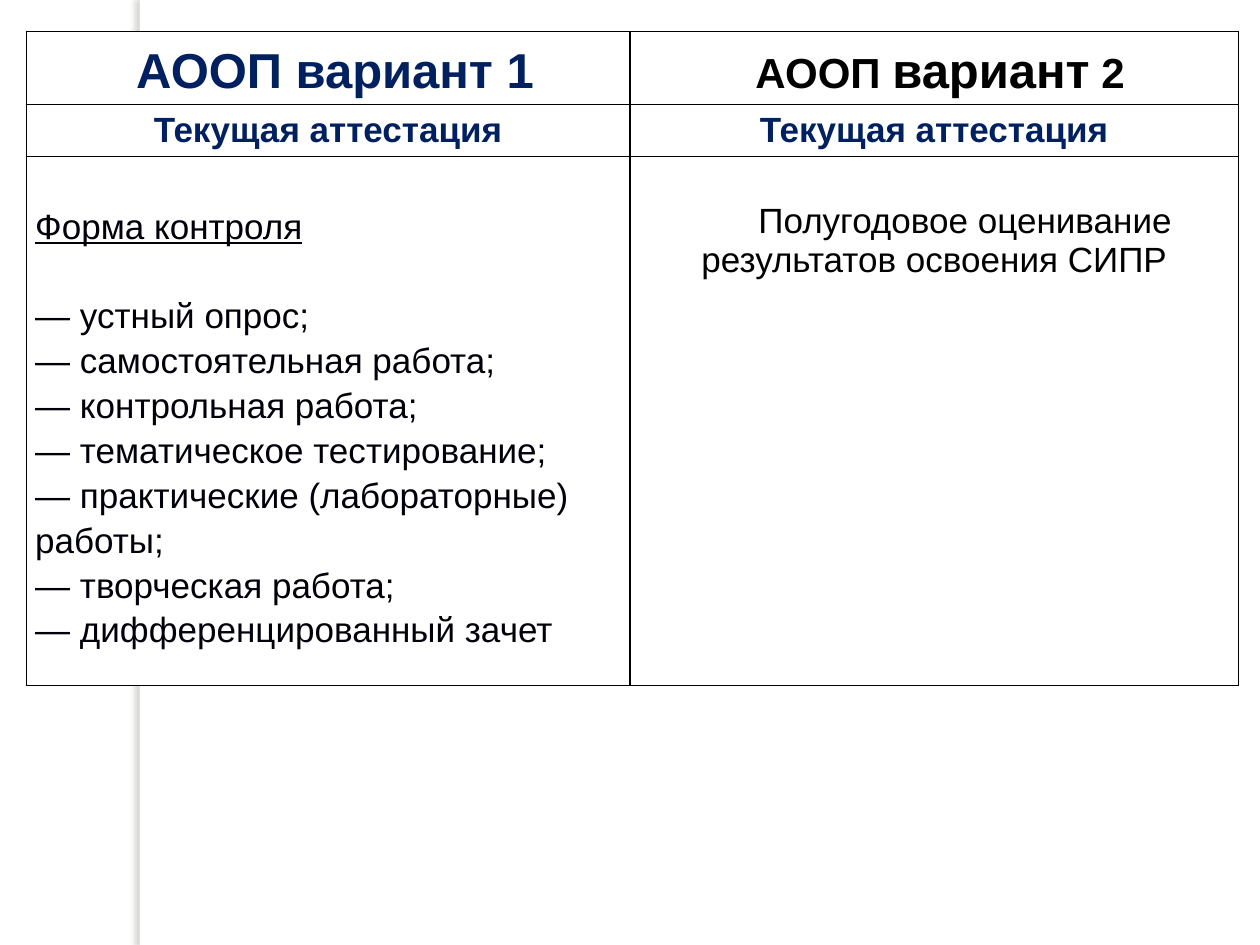
"""Build a slide comparing current assessment in two programme variants."""
from lxml import etree
from pptx import Presentation
from pptx.dml.color import RGBColor
from pptx.enum.shapes import MSO_SHAPE
from pptx.enum.text import PP_ALIGN
from pptx.oxml.ns import qn
from pptx.util import Inches, Pt

RECTANGLE = MSO_SHAPE.RECTANGLE
LEFT, CENTER = PP_ALIGN.LEFT, PP_ALIGN.CENTER
FONT = "Arial"
WHITE, BLACK, NAVY, INK, SHADOW = "FFFFFF", "000000", "002060", "00000A", "736F63"
COLUMN_WIDTHS = (4.79, 4.83)
ROW_HEIGHTS = (0.58, 0.41, 4.2)
CONTROL_FORMS = (
    "— устный опрос;",
    "— самостоятельная работа;",
    "— контрольная работа;",
    "— тематическое тестирование;",
    "— практические (лабораторные) работы;",
    "— творческая работа;",
    "— дифференцированный зачет",
)


def color(value):
    """Return the colour for a hex string."""
    return RGBColor.from_string(value)


def add_side_strip(slide):
    """Add the white vertical strip that casts a soft shadow to the left."""
    strip = slide.shapes.add_shape(RECTANGLE, Inches(1.11), 0, Inches(0.08), Inches(7.5))
    strip.shadow.inherit = False
    strip.fill.solid()
    strip.fill.fore_color.rgb = color(WHITE)
    strip.line.fill.background()
    effects = strip.element.spPr.find(qn("a:effectLst"))
    shadow = etree.SubElement(
        effects, qn("a:outerShdw"), blurRad=str(Pt(3)), dist=str(Pt(3)),
        dir="10800000", algn="tl", rotWithShape="0")
    shade = etree.SubElement(shadow, qn("a:srgbClr"), val=SHADOW)
    etree.SubElement(shade, qn("a:alpha"), val="25000")


def format_cell(cell):
    """Give a cell black borders and a white fill."""
    properties = cell._tc.get_or_add_tcPr()
    for side in ("L", "R", "T", "B"):
        border = etree.SubElement(properties, qn(f"a:ln{side}"), w=str(Pt(1)))
        fill = etree.SubElement(border, qn("a:solidFill"))
        etree.SubElement(fill, qn("a:srgbClr"), val=BLACK)
    cell.fill.solid()
    cell.fill.fore_color.rgb = color(WHITE)


def set_margins(cell, left, top, right, bottom):
    """Set the four cell margins in inches."""
    cell.margin_left, cell.margin_top = Inches(left), Inches(top)
    cell.margin_right, cell.margin_bottom = Inches(right), Inches(bottom)


def format_paragraph(paragraph, size, ink, bold=False, align=LEFT, spacing=1.0):
    """Set the font, alignment and line spacing of a paragraph."""
    paragraph.alignment = align
    paragraph.line_spacing = spacing
    font = paragraph.font
    font.name, font.size, font.bold = FONT, Pt(size), bold
    font.color.rgb = color(ink)


def fill_heading(cell, runs, ink):
    """Write a centred bold heading from pairs of text and size."""
    set_margins(cell, 0.04, 0.04, 0.04, 0.04)
    paragraph = cell.text_frame.paragraphs[0]
    for text, size in runs:
        run = paragraph.add_run()
        run.text = text
        run.font.size = Pt(size)
    format_paragraph(paragraph, runs[0][1], ink, True, CENTER, 1.15)


def fill_subheading(cell):
    """Write the centred name of the assessment kind."""
    paragraph = cell.text_frame.paragraphs[0]
    paragraph.text = "Текущая аттестация"
    format_paragraph(paragraph, 20, NAVY, True, CENTER)


def fill_control_forms(cell):
    """Write the underlined caption and the list of control forms."""
    set_margins(cell, 0.07, 0.36, 0.07, 0)
    caption = cell.text_frame.paragraphs[0]
    caption.text = "Форма контроля"
    format_paragraph(caption, 20, INK, spacing=1.15)
    caption.font.underline = True
    for index, text in enumerate(CONTROL_FORMS):
        paragraph = cell.text_frame.add_paragraph()
        paragraph.text = text
        format_paragraph(paragraph, 20, INK, spacing=1.15)
        paragraph.space_before = Pt(0 if index else 25.5)


def fill_half_year(cell):
    """Write the centred half-year assessment with a first-line indent."""
    set_margins(cell, 0.07, 0.36, 0.07, 0)
    paragraph = cell.text_frame.paragraphs[0]
    paragraph.text = "Полугодовое оценивание результатов освоения СИПР"
    format_paragraph(paragraph, 20, BLACK, align=CENTER)
    paragraph._p.get_or_add_pPr().set("indent", str(Inches(0.49)))


def add_assessment_table(slide):
    """Add the bordered table and return it."""
    table = slide.shapes.add_table(
        len(ROW_HEIGHTS), len(COLUMN_WIDTHS), Inches(0.21), Inches(0.25),
        Inches(sum(COLUMN_WIDTHS)), Inches(sum(ROW_HEIGHTS))).table
    table.first_row = table.horz_banding = False
    for column, width in zip(table.columns, COLUMN_WIDTHS):
        column.width = Inches(width)
    for row, height in zip(table.rows, ROW_HEIGHTS):
        row.height = Inches(height)
    for cell in table.iter_cells():
        format_cell(cell)
    return table


def main():
    """Build and save the presentation."""
    presentation = Presentation()
    presentation.slide_width, presentation.slide_height = Inches(10), Inches(7.5)
    slide = presentation.slides.add_slide(presentation.slide_layouts[6])
    add_side_strip(slide)
    table = add_assessment_table(slide)
    fill_heading(table.cell(0, 0), [(" АООП вариант 1", 28)], NAVY)
    fill_heading(table.cell(0, 1), [(" АООП ", 24), ("вариант", 28), (" 2", 24)], BLACK)
    for column in range(len(COLUMN_WIDTHS)):
        fill_subheading(table.cell(1, column))
    fill_control_forms(table.cell(2, 0))
    fill_half_year(table.cell(2, 1))
    presentation.save("out.pptx")


if __name__ == "__main__":
    main()
